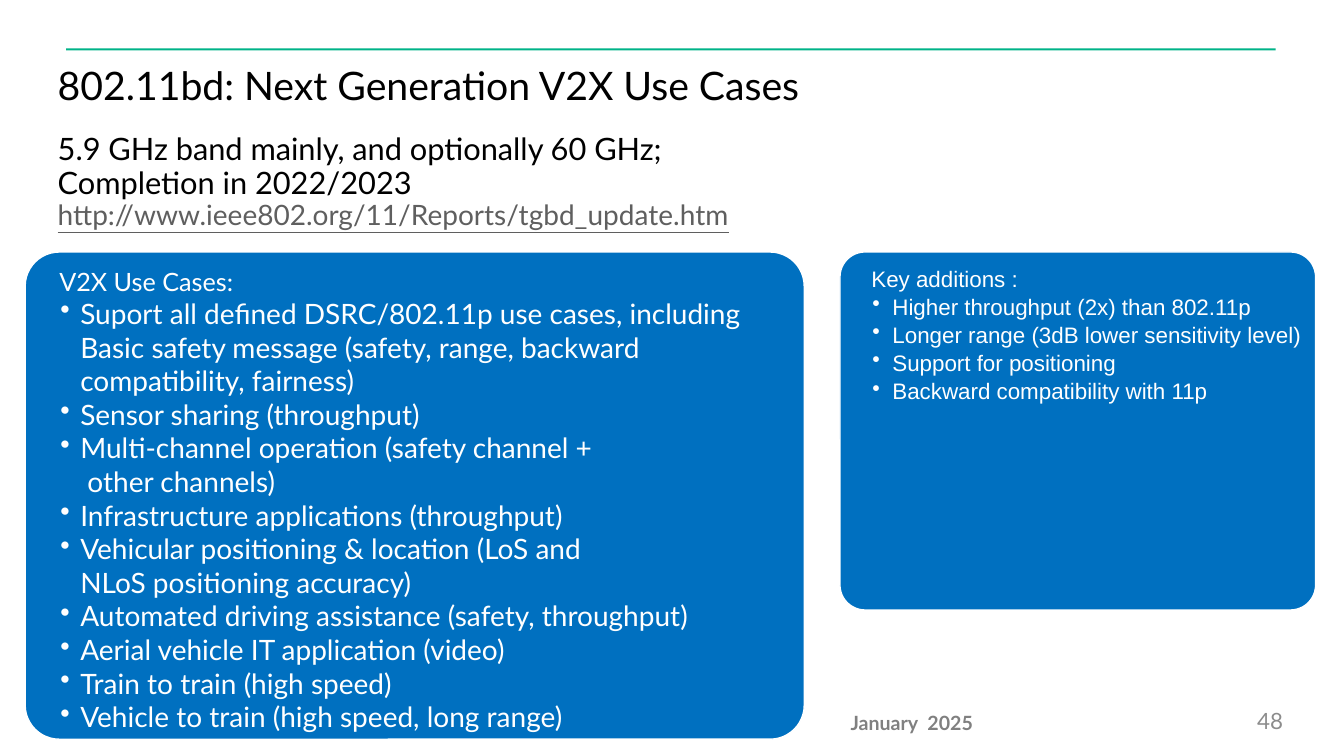
from dataclasses import dataclass

from lxml import etree
from pptx import Presentation
from pptx.dml.color import RGBColor
from pptx.enum.shapes import MSO_SHAPE
from pptx.enum.text import MSO_ANCHOR, PP_ALIGN
from pptx.oxml.ns import qn
from pptx.util import Pt

RECTANGLE = MSO_SHAPE.RECTANGLE
ROUNDED = MSO_SHAPE.ROUNDED_RECTANGLE
TOP = MSO_ANCHOR.TOP
LEFT, RIGHT = PP_ALIGN.LEFT, PP_ALIGN.RIGHT
EMU_PER_PX = 9525


@dataclass(frozen=True)
class Theme:
    body_font: str = "Lato"
    side_font: str = "Arial"
    green: str = "00B388"
    blue: str = "0070C0"
    white: str = "FFFFFF"
    black: str = "000000"
    link: str = "5F5F5F"
    number: str = "8C8C8C"
    date: str = "808080"
    title_size: int = 28
    subtitle_size: int = 22
    bullet_size: int = 20
    heading_size: int = 18
    small_size: int = 16
    date_size: int = 14


THEME = Theme()

USE_CASES = [
    "Suport all defined DSRC/802.11p use cases, including\n"
    "Basic safety message (safety, range, backward\ncompatibility, fairness)",
    "Sensor sharing (throughput)",
    "Multi-channel operation (safety channel +\n other channels)",
    "Infrastructure applications (throughput)",
    "Vehicular positioning & location (LoS and\nNLoS positioning accuracy)",
    "Automated driving assistance (safety, throughput)",
    "Aerial vehicle IT application (video)",
    "Train to train (high speed)",
    "Vehicle to train (high speed, long range)",
]
ADDITIONS = [
    "Higher throughput (2x) than 802.11p",
    "Longer range (3dB lower sensitivity level)",
    "Support for positioning",
    "Backward compatibility with 11p",
]


def px(length):
    return length * EMU_PER_PX


def color(value):
    return RGBColor.from_string(value)


def set_frame(shape, margins):
    frame = shape.text_frame
    frame.word_wrap = True
    frame.vertical_anchor = TOP
    frame.margin_left, frame.margin_top, frame.margin_right, frame.margin_bottom = map(px, margins)
    return frame


def write_paragraph(frame, text, size, ink, font=THEME.body_font, align=LEFT, spacing=1.0):
    """Fill the empty first paragraph, or append a new one."""
    first = frame.paragraphs[0]
    paragraph = frame.add_paragraph() if first.text else first
    paragraph.text = text
    paragraph.alignment = align
    paragraph.line_spacing = spacing
    paragraph.font.name = font
    paragraph.font.size = Pt(size)
    paragraph.font.color.rgb = color(ink)
    return paragraph


def indent(paragraph, margin, hanging, bullet=False):
    properties = paragraph._p.get_or_add_pPr()
    properties.set("marL", str(px(margin)))
    properties.set("indent", str(px(-hanging)))
    if bullet:
        paragraph.level = 1
        marker = etree.Element(qn("a:buChar"), char="•")
        properties.find(qn("a:defRPr")).addprevious(marker)


def add_block(slide, box, kind, fill):
    shape = slide.shapes.add_shape(kind, *map(px, box))
    shape.shadow.inherit = False
    shape.fill.solid()
    shape.fill.fore_color.rgb = color(fill)
    shape.line.fill.background()
    return shape


def add_panel(slide, box, heading, heading_indent, items, font, sizes, spacing):
    panel = add_block(slide, box, ROUNDED, THEME.blue)
    panel.adjustments[0] = 0.07
    panel.line.color.rgb = color(THEME.white)
    panel.line.width = Pt(1)
    frame = set_frame(panel, (6, 4, 0, 4))
    heading_size, item_size = sizes
    paragraph = write_paragraph(frame, heading, heading_size, THEME.white, font, spacing=spacing)
    indent(paragraph, *heading_indent)
    for item in items:
        paragraph = write_paragraph(frame, item, item_size, THEME.white, font, spacing=spacing)
        indent(paragraph, 37, 19, bullet=True)


def add_text(slide, box, margins=(0, 0, 0, 0)):
    return set_frame(slide.shapes.add_textbox(*map(px, box)), margins)


def main():
    presentation = Presentation()
    presentation.slide_width = px(1280)
    presentation.slide_height = px(720)
    slide = presentation.slides.add_slide(presentation.slide_layouts[6])

    # Rule above the title
    add_block(slide, (63, 46, 1152, 2), RECTANGLE, THEME.green)

    # Panels
    add_panel(slide, (24, 240, 742, 464), "V2X Use Cases:", (43, 26), USE_CASES,
              THEME.body_font, (THEME.heading_size, THEME.bullet_size), 1.0)
    add_panel(slide, (800, 240, 453, 341), "Key additions :", (51, 34), ADDITIONS,
              THEME.side_font, (THEME.small_size, THEME.small_size), 1.05)

    # Title and subtitle
    title = add_text(slide, (55, 63, 1137, 56))
    write_paragraph(title, "802.11bd: Next Generation V2X Use Cases",
                    THEME.title_size, THEME.black, spacing=0.9)
    subtitle = add_text(slide, (55, 128, 684, 96))
    for line in ("5.9 GHz band mainly, and optionally 60 GHz;", "Completion in 2022/2023"):
        write_paragraph(subtitle, line, THEME.subtitle_size, THEME.black, spacing=0.9)
    link = write_paragraph(subtitle, "http://www.ieee802.org/11/Reports/tgbd_update.htm",
                           THEME.bullet_size, THEME.link, spacing=0.9)
    link.font.underline = True

    # Footer
    number = add_text(slide, (1176, 668, 56, 24), (10, 5, 10, 5))
    write_paragraph(number, "48", THEME.small_size, THEME.number, align=RIGHT)
    date = add_text(slide, (800, 672, 164, 14), (10, 5, 10, 5))
    write_paragraph(date, "January  2025", THEME.date_size, THEME.date).font.bold = True

    presentation.save("out.pptx")


if __name__ == "__main__":
    main()
